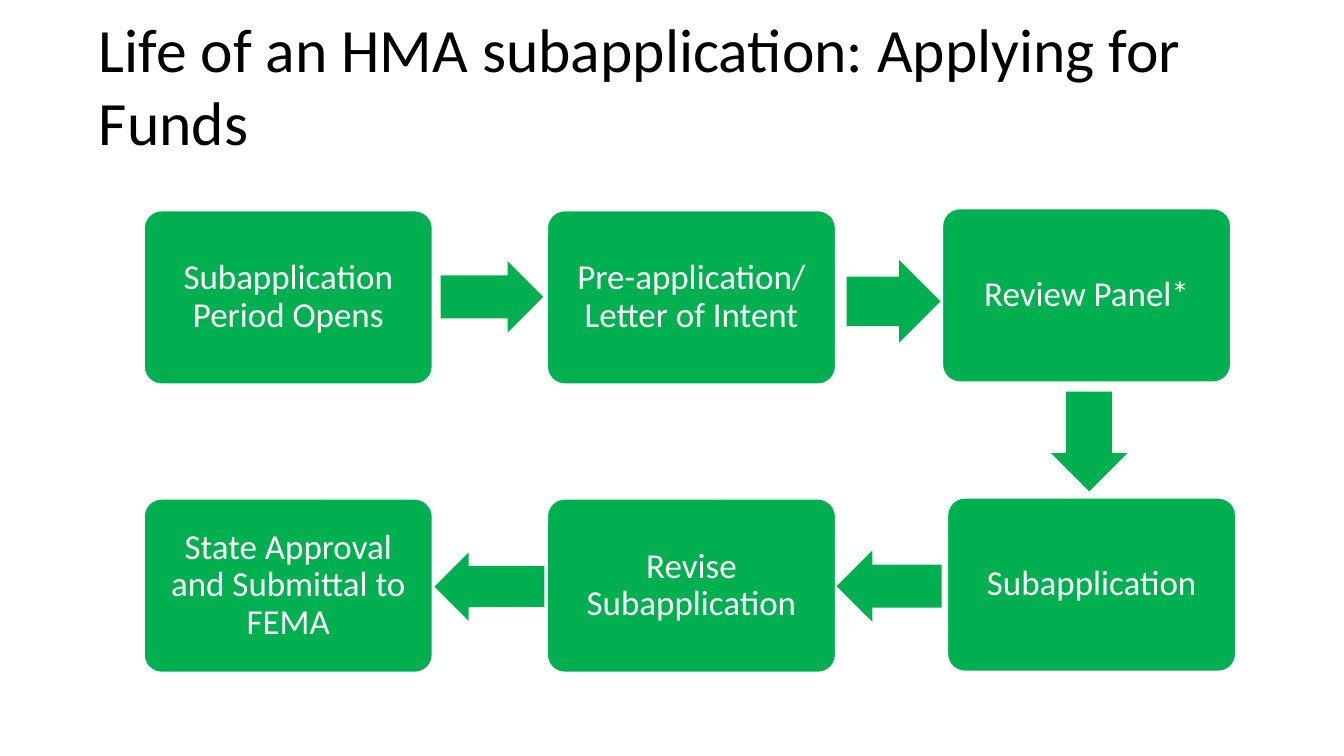
from typing import NamedTuple

from pptx import Presentation
from pptx.dml.color import RGBColor
from pptx.enum.shapes import MSO_SHAPE as Kind
from pptx.enum.text import MSO_ANCHOR as Anchor, MSO_AUTO_SIZE as Fit, PP_ALIGN as Align
from pptx.util import Inches, Pt

BLACK = RGBColor(0x00, 0x00, 0x00)
WHITE = RGBColor(0xFF, 0xFF, 0xFF)
GREEN = RGBColor(0x00, 0xB0, 0x50)
FONT = "Calibri"

# Fine grid: each column and row is a tenth of an inch
CELL = Inches(0.1)
COLS, ROWS = 133.33, 75
STEP_W, STEP_H = 28.6, 17.2


class Step(NamedTuple):
    text: str
    col: float
    row: float


class Arrow(NamedTuple):
    col: float
    row: float
    wide: float
    high: float
    turn: int = 0


STEPS = [
    Step("Subapplication Period Opens", 14.3, 20.9),
    Step("Pre-application/Letter of Intent", 54.3, 20.9),
    Step("Review Panel*", 93.5, 20.7),
    Step("Subapplication", 94, 49.4),
    Step("Revise Subapplication", 54.3, 49.5),
    Step("State Approval and Submittal to FEMA", 14.3, 49.5),
]
ARROWS = [
    Arrow(43.7, 25.9, 10.2, 7.1),
    Arrow(84, 25.8, 9.3, 8.2),
    Arrow(103.1, 40, 9.9, 7.6, 90),
    Arrow(83, 54.6, 10.4, 7.1, 180),
    Arrow(43.1, 54.8, 10.9, 6.8, 180),
]


def grid(*cells: float) -> list[int]:
    return [round(n * CELL) for n in cells]


def style(para, size: int, color: RGBColor, align: Align) -> None:
    para.alignment = align
    para.font.name = FONT
    para.font.size = Pt(size)
    para.font.color.rgb = color


def add_title(slide, text: str) -> None:
    title = slide.shapes.title
    title.left, title.top, title.width, title.height = grid(8.8, 3.7, 115.3, 12.5)
    frame = title.text_frame
    frame.text = text
    frame.word_wrap = True
    frame.auto_size = Fit.NONE
    frame.vertical_anchor = Anchor.BOTTOM
    style(frame.paragraphs[0], 44, BLACK, Align.LEFT)


def add_green(slide, kind: Kind, *cells: float):
    shape = slide.shapes.add_shape(kind, *grid(*cells))
    shape.shadow.inherit = False
    shape.fill.solid()
    shape.fill.fore_color.rgb = GREEN
    return shape


def add_step(slide, step: Step) -> None:
    box = add_green(slide, Kind.ROUNDED_RECTANGLE, step.col, step.row, STEP_W, STEP_H)
    box.adjustments[0] = 0.1
    box.line.color.rgb = WHITE
    box.line.width = Pt(1)
    frame = box.text_frame
    frame.margin_left = frame.margin_right = CELL
    frame.margin_top = frame.margin_bottom = CELL
    frame.word_wrap = True
    frame.vertical_anchor = Anchor.MIDDLE
    frame.text = step.text
    para = frame.paragraphs[0]
    para.line_spacing = 0.9
    style(para, 25, WHITE, Align.CENTER)


def add_arrow(slide, arrow: Arrow) -> None:
    shape = add_green(slide, Kind.RIGHT_ARROW, arrow.col, arrow.row, arrow.wide, arrow.high)
    shape.adjustments[0] = 0.6
    shape.adjustments[1] = 0.5
    shape.line.fill.background()
    shape.rotation = arrow.turn


def main() -> None:
    deck = Presentation()
    deck.slide_width, deck.slide_height = grid(COLS, ROWS)
    slide = deck.slides.add_slide(deck.slide_layouts[5])
    add_title(slide, "Life of an HMA subapplication: Applying for Funds")

    # Flow: right along the top, down, then back to the left
    for step in STEPS:
        add_step(slide, step)
    for arrow in ARROWS:
        add_arrow(slide, arrow)
    deck.save("out.pptx")


if __name__ == "__main__":
    main()
